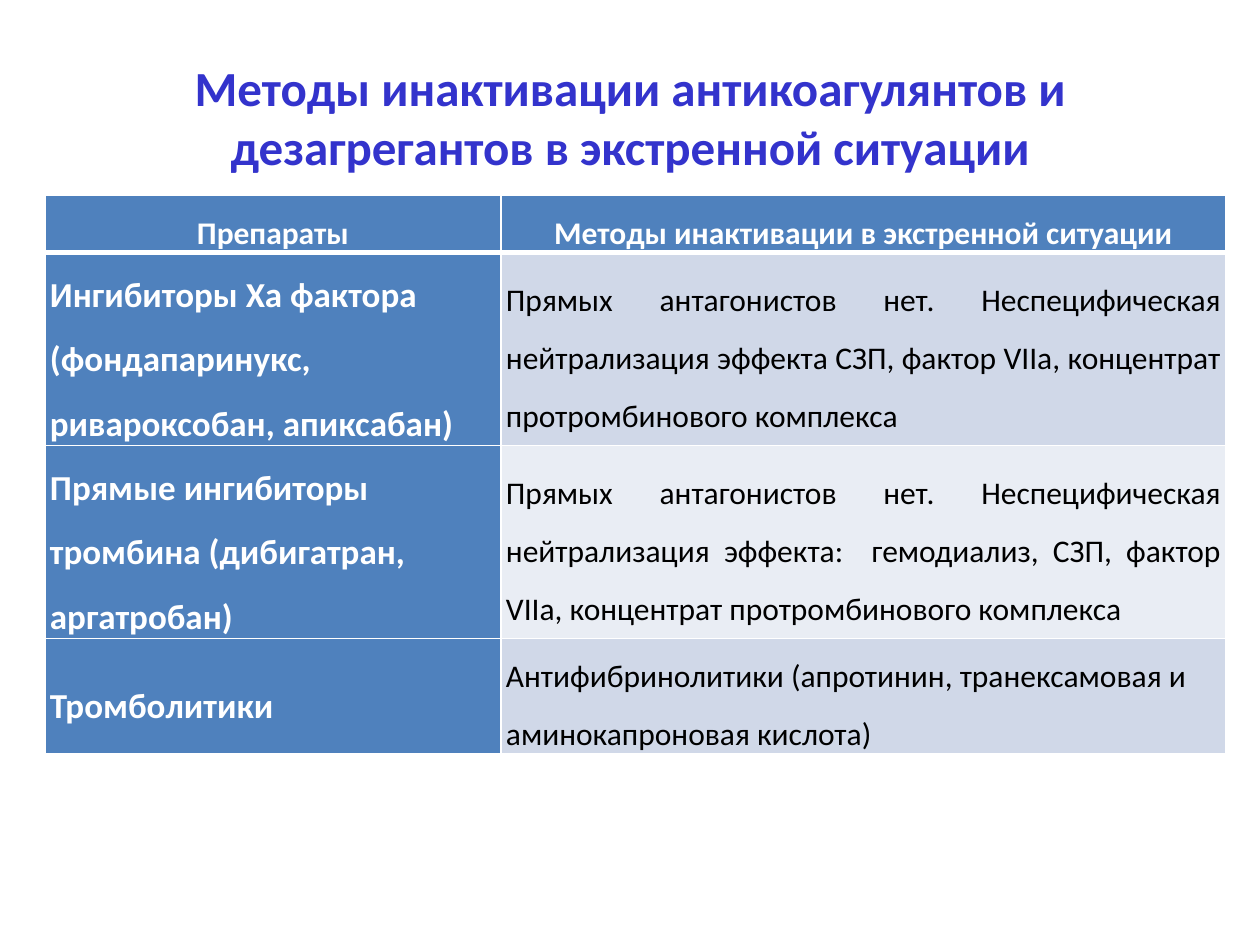
import pptx
import pptx.util
import pptx.dml.color
import pptx.enum.text
import pptx.oxml

RGBColor = pptx.dml.color.RGBColor
Align = pptx.enum.text.PP_ALIGN
Anchor = pptx.enum.text.MSO_ANCHOR
Pt = pptx.util.Pt

TITLE_BLUE = RGBColor(0x33, 0x33, 0xCC)
HEADER_BLUE = RGBColor(0x4F, 0x81, 0xBD)
BAND_DARK = RGBColor(0xD0, 0xD8, 0xE8)
BAND_LIGHT = RGBColor(0xE9, 0xED, 0xF4)
WHITE = RGBColor(0xFF, 0xFF, 0xFF)
BLACK = RGBColor(0, 0, 0)

PX_PER_INCH = 126
COLUMN_WIDTHS = (456, 725)
ROW_HEIGHTS = (52, 134, 161, 79)

HEADINGS = ("Препараты", "Методы инактивации в экстренной ситуации")
METHODS = (
    ("Ингибиторы Ха фактора (фондапаринукс, ривароксобан, апиксабан)",
     "Прямых антагонистов нет. Неспецифическая нейтрализация эффекта СЗП, "
     "фактор VIIa, концентрат протромбинового комплекса", Align.JUSTIFY),
    ("Прямые ингибиторы тромбина (дибигатран, аргатробан)",
     "Прямых антагонистов нет. Неспецифическая нейтрализация эффекта:  гемодиализ, "
     "СЗП, фактор VIIa, концентрат протромбинового комплекса", Align.JUSTIFY),
    ("Тромболитики",
     "Антифибринолитики (апротинин, транексамовая и аминокапроновая кислота)",
     Align.LEFT),
)

HEADING_FONT = {"name": "Calibri", "size": Pt(18), "bold": True}
DRUG_FONT = {"name": "Calibri", "size": Pt(20), "bold": True}
METHOD_FONT = {"name": "Calibri", "size": Pt(18), "bold": False}


def px(length):
    return pptx.util.Emu(round(length * 914400 / PX_PER_INCH))


def apply(target, values):
    for name, value in values.items():
        setattr(target, name, value)


def write(frame, text, font, color, paragraph_format):
    frame.text = text
    paragraph = frame.paragraphs[0]
    apply(paragraph, paragraph_format)
    run_font = paragraph.runs[0].font
    apply(run_font, font)
    run_font.color.rgb = color


def add_borders(cell, bottom_points):
    properties = cell._tc.get_or_add_tcPr()
    for side, points in (("L", 1), ("R", 1), ("T", 1), ("B", bottom_points)):
        properties.append(pptx.oxml.parse_xml(
            '<a:ln%s xmlns:a="http://schemas.openxmlformats.org/drawingml/2006/main" w="%d">'
            '<a:solidFill><a:srgbClr val="%s"/></a:solidFill></a:ln%s>'
            % (side, Pt(points), WHITE, side)))


def fill_cell(cell, text, font, color, background, alignment,
              anchor=Anchor.MIDDLE, bottom_points=1):
    apply(cell, {"margin_left": px(5), "margin_right": px(5), "margin_top": 0,
                 "margin_bottom": 0, "vertical_anchor": anchor})
    write(cell.text_frame, text, font, color,
          {"alignment": alignment, "line_spacing": 1.5, "space_after": Pt(6)})
    add_borders(cell, bottom_points)
    cell.fill.solid()
    cell.fill.fore_color.rgb = background


def add_title(slide):
    title = slide.shapes.title
    apply(title, {"left": px(63), "top": px(38), "width": px(1134), "height": px(157)})
    apply(title.text_frame, {"vertical_anchor": Anchor.MIDDLE, "word_wrap": True})
    write(title.text_frame,
          "Методы инактивации антикоагулянтов и дезагрегантов в экстренной ситуации",
          {"name": "Calibri", "size": Pt(28), "bold": True}, TITLE_BLUE,
          {"alignment": Align.CENTER})


def add_methods_table(slide):
    methods = slide.shapes.add_table(
        len(ROW_HEIGHTS), len(COLUMN_WIDTHS),
        px(45), px(195), px(sum(COLUMN_WIDTHS)), px(548)).table
    for column, width in zip(methods.columns, COLUMN_WIDTHS):
        column.width = px(width)
    for row, height in zip(methods.rows, ROW_HEIGHTS):
        row.height = px(height)
    for column, heading in enumerate(HEADINGS):
        fill_cell(methods.cell(0, column), heading, HEADING_FONT, WHITE,
                  HEADER_BLUE, Align.CENTER, Anchor.TOP, 3)
    for row, (drug, method, alignment) in enumerate(METHODS, 1):
        band = BAND_DARK if row % 2 else BAND_LIGHT
        top_border_owner = methods.cell(row, 0)
        fill_cell(top_border_owner, drug, DRUG_FONT, WHITE, HEADER_BLUE, Align.LEFT)
        fill_cell(methods.cell(row, 1), method, METHOD_FONT, BLACK, band, alignment)
    for cell in methods.rows[1].cells:
        cell._tc.tcPr.find(pptx.oxml.ns.qn("a:lnT")).set("w", str(Pt(3)))


def main():
    presentation = pptx.Presentation()
    apply(presentation, {"slide_width": px(1260), "slide_height": px(945)})
    slide = presentation.slides.add_slide(presentation.slide_layouts[5])
    add_title(slide)
    add_methods_table(slide)
    presentation.save("out.pptx")


if __name__ == "__main__":
    main()
